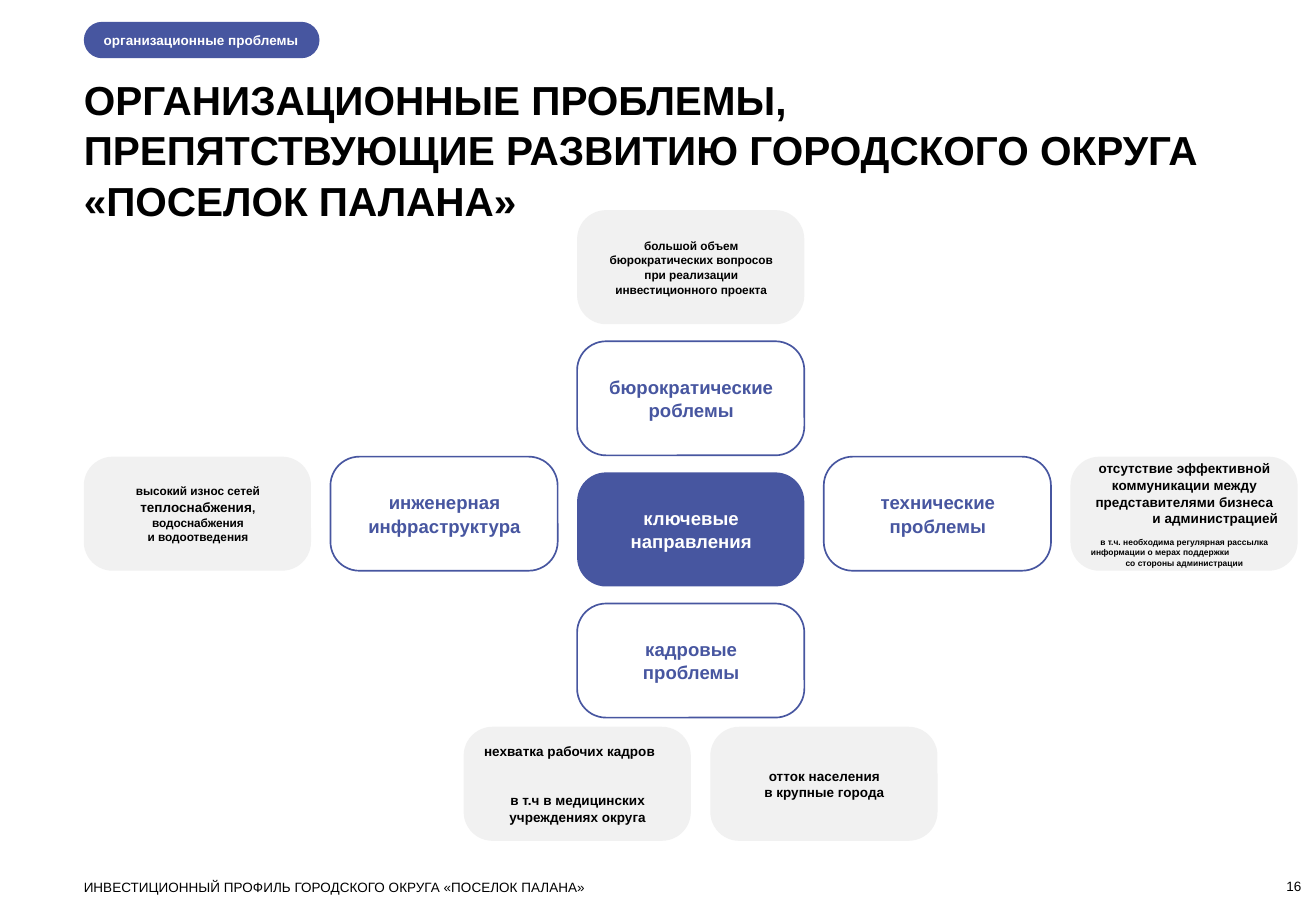
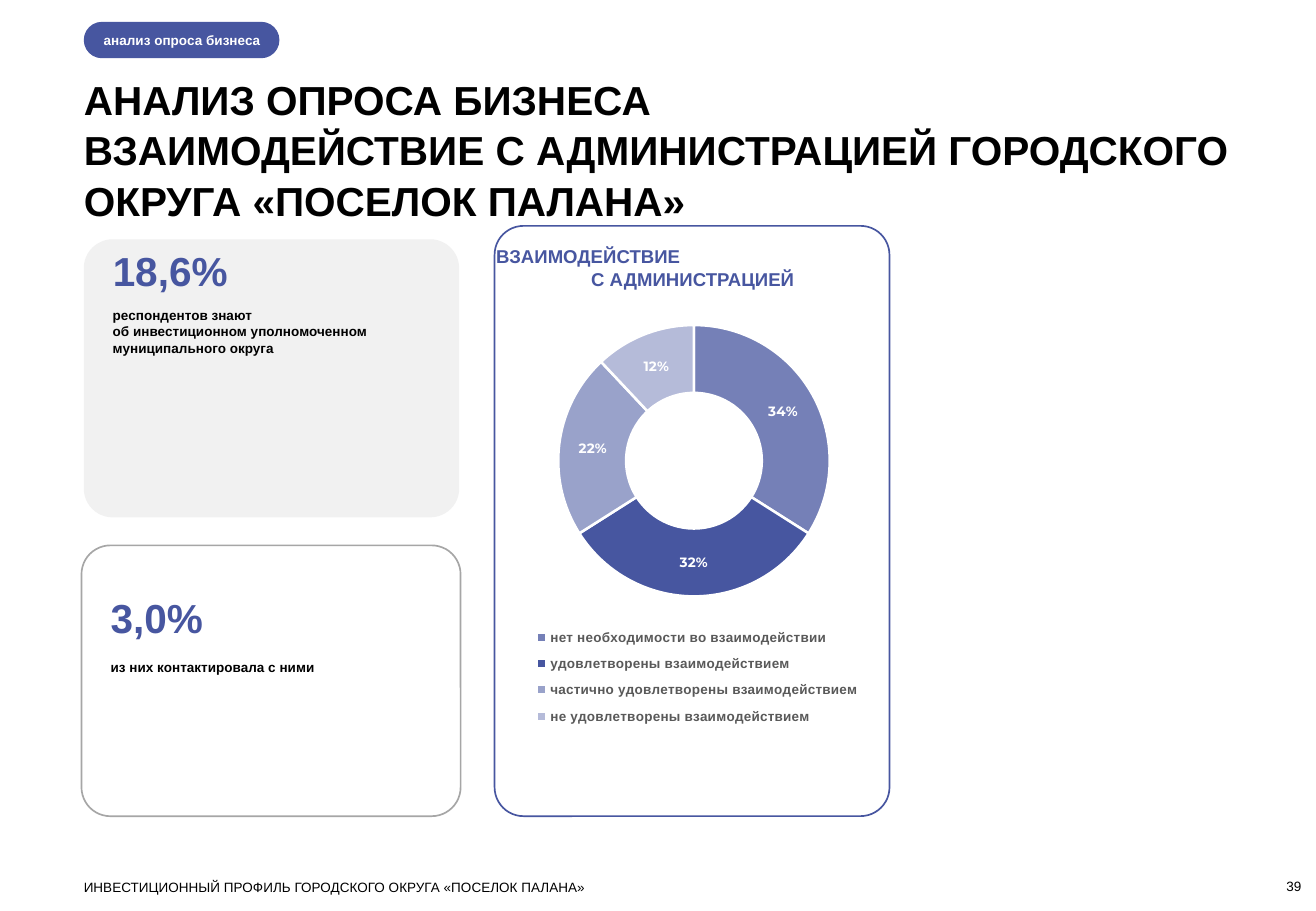
from dataclasses import dataclass

import pptx
import pptx.chart.data
import pptx.dml.color
import pptx.enum.chart
import pptx.enum.shapes
import pptx.enum.text
import pptx.oxml
import pptx.oxml.ns
import pptx.util

RGBColor = pptx.dml.color.RGBColor
Pt = pptx.util.Pt
ALIGN = pptx.enum.text.PP_ALIGN
ANCHOR = pptx.enum.text.MSO_ANCHOR

BLUE = RGBColor(0x47, 0x56, 0xA0)
PALE = RGBColor(0xF1, 0xF1, 0xF1)
GREY = RGBColor(0xA6, 0xA6, 0xA6)
LEGEND_GREY = RGBColor(0x59, 0x59, 0x59)
BLACK = RGBColor(0, 0, 0)
WHITE = RGBColor(0xFF, 0xFF, 0xFF)

FONT = "Arial"
LINE_SPACING = 1.04
FOOTER = "ИНВЕСТИЦИОННЫЙ ПРОФИЛЬ ГОРОДСКОГО ОКРУГА «ПОСЕЛОК ПАЛАНА»"
MARGIN = 6.37


@dataclass
class Box:
    left: int
    top: int
    width: int
    height: int

    def area(self, left, top, width, height):
        """A box inside this one, in percent of its size."""
        return Box(int(self.left + self.width * left / 100),
                   int(self.top + self.height * top / 100),
                   int(self.width * width / 100),
                   int(self.height * height / 100))

    def edges(self):
        return self.left, self.top, self.width, self.height


PAGE = Box(0, 0, pptx.util.Inches(10.83), pptx.util.Inches(7.5))
CORNER = PAGE.width * 0.022


@dataclass
class Line:
    """One paragraph; spans are (text, size) pairs."""
    spans: list
    align: object = ALIGN.CENTER
    before: float = 0


def lines(size, *texts, align=ALIGN.CENTER):
    return [Line([(text, size)], align) for text in texts]


def style_font(font, size, color, bold=True, name=FONT):
    font.name, font.size, font.bold = name, Pt(size), bold
    font.color.rgb = color


def write(frame, paragraphs, color, bold=True, insets=(0, 0, 0, 0),
          anchor=ANCHOR.TOP):
    frame.word_wrap = True
    frame.auto_size = pptx.enum.text.MSO_AUTO_SIZE.NONE
    frame.vertical_anchor = anchor
    (frame.margin_left, frame.margin_top,
     frame.margin_right, frame.margin_bottom) = map(pptx.util.Inches, insets)
    for index, line in enumerate(paragraphs):
        para = frame.add_paragraph() if index else frame.paragraphs[0]
        para.alignment = line.align
        para.line_spacing = LINE_SPACING
        para.space_before = Pt(line.before)
        for text, size in line.spans:
            span = para.add_run()
            span.text = text
            style_font(span.font, size, color, bold)


def add_text(page, box, paragraphs, color=BLACK, bold=True, anchor=ANCHOR.TOP):
    frame = page.shapes.add_textbox(*box.edges()).text_frame
    write(frame, paragraphs, color, bold, anchor=anchor)


def add_panel(page, box, fill=None, outline=None, corner=CORNER):
    panel = page.shapes.add_shape(
        pptx.enum.shapes.MSO_SHAPE.ROUNDED_RECTANGLE, *box.edges())
    panel.adjustments[0] = min(0.5, corner / min(box.width, box.height))
    panel.shadow.inherit = False
    if fill is None:
        panel.fill.background()
    else:
        panel.fill.solid()
        panel.fill.fore_color.rgb = fill
    if outline is None:
        panel.line.fill.background()
    else:
        panel.line.color.rgb = outline
        panel.line.width = Pt(1)
    return panel


def add_page(deck, title, tag, tag_width, number):
    """A title-only slide with tag, title, footer and page number."""
    page = deck.slides.add_slide(deck.slide_layouts[5])
    heading = page.shapes.title
    (heading.left, heading.top,
     heading.width, heading.height) = PAGE.area(MARGIN, 8, 92.52, 16.13).edges()
    write(heading.text_frame, lines(24, *title, align=ALIGN.LEFT), BLACK)
    pill = add_panel(page, PAGE.area(MARGIN, 2.4, tag_width, 4), BLUE,
                     corner=PAGE.height)
    write(pill.text_frame, lines(8, tag, align=ALIGN.LEFT), WHITE,
          insets=(0.12, 0, 0, 0), anchor=ANCHOR.MIDDLE)
    add_text(page, PAGE.area(MARGIN, 96.4, 73.87, 1.73),
             lines(8, FOOTER, align=ALIGN.LEFT), bold=False)
    add_text(page, PAGE.area(91.5, 96.4, 7.39, 1.73),
             lines(8, number, align=ALIGN.RIGHT), bold=False,
             anchor=ANCHOR.BOTTOM)
    return page


def add_problem_map(page, box):
    """Cards on a grid of five columns and five rows around the centre."""
    side_row, last_row = 1.88, 3.94
    topics = [
        (2, 1, "бюрократические роблемы"),
        (1, side_row, "инженерная инфраструктура"),
        (3, side_row, "технические проблемы"),
        (2, 3, "кадровые проблемы"),
    ]
    details = [
        (2, 0, lines(7, "большой объем бюрократических вопросов "
                        "при реализации инвестиционного проекта")),
        (0, side_row, [
            Line([("высокий износ сетей ", 7), ("теплоснабжения", 8),
                  (", водоснабжения", 7)]),
            Line([("и водоотведения", 7)])]),
        (4, side_row, [
            *lines(8, "отсутствие эффективной",
                   "коммуникации между представителями бизнеса"),
            Line([("и администрацией", 8)], ALIGN.RIGHT),
            Line([("в т.ч. необходима регулярная рассылка", 5)], before=6),
            Line([("информации о мерах поддержки", 5)], ALIGN.LEFT),
            Line([("со стороны администрации", 5)])]),
        (1.54, last_row, [
            Line([("нехватка рабочих кадров", 8)], ALIGN.LEFT),
            Line([("в т.ч в медицинских учреждениях округа", 8)], before=19)]),
        (2.54, last_row, lines(8, "отток населения", "в крупные города")),
    ]

    def add_card(column, row, paragraphs, color, fill=None, outline=None):
        cell = box.area(column * 20.32, row * 20.8, 18.72, 18.1)
        card = add_panel(page, cell, fill, outline)
        write(card.text_frame, paragraphs, color, anchor=ANCHOR.MIDDLE,
              insets=(0.1, 0.05, 0.09, 0.05))

    add_card(2, 2, lines(11, "ключевые направления"), WHITE, fill=BLUE)
    for column, row, topic in topics:
        add_card(column, row, lines(11, topic), BLUE, outline=BLUE)
    for column, row, paragraphs in details:
        add_card(column, row, paragraphs, BLACK, fill=PALE)


def add_statistic(page, box, figure, caption, tops, **panel_style):
    """A panel with a large figure and a caption at the given tops."""
    add_panel(page, box, **panel_style)
    figure_top, caption_top = tops
    add_text(page, box.area(7.7, figure_top, 86, 17),
             lines(24, figure, align=ALIGN.LEFT), BLUE)
    add_text(page, box.area(7.7, caption_top, 80, 17),
             lines(8, *caption, align=ALIGN.LEFT))


def set_layout(parent, position, shares, inner=False):
    """Give a plot area or legend a fixed place within its chart."""
    for old in parent.findall(pptx.oxml.ns.qn("c:layout")):
        parent.remove(old)
    target = '<c:layoutTarget val="inner"/>' if inner else ""
    modes = "".join(f'<c:{axis}Mode val="edge"/>' for axis in "xy")
    sizes = "".join(f'<c:{key} val="{share}"/>' for key, share in zip("xywh", shares))
    parent.insert(position, pptx.oxml.parse_xml(
        f'<c:layout {pptx.oxml.ns.nsdecls("c")}><c:manualLayout>'
        f'{target}{modes}{sizes}</c:manualLayout></c:layout>'))


def set_opacity(point_xml, percent):
    color = point_xml.find(".//" + pptx.oxml.ns.qn("a:srgbClr"))
    color.append(pptx.oxml.parse_xml(
        f'<a:alpha {pptx.oxml.ns.nsdecls("a")} val="{percent * 1000}"/>'))


def add_interaction_chart(page, box):
    slices = [
        ("нет необходимости во взаимодействии", 34, 75),
        ("удовлетворены взаимодействием", 32, 100),
        ("частично удовлетворены взаимодействием", 22, 55),
        ("не удовлетворены взаимодействием", 12, 40),
    ]
    names, values, opacities = zip(*slices)
    data = pptx.chart.data.CategoryChartData()
    data.categories = names
    data.add_series("Series 1", values)
    chart = page.shapes.add_chart(
        pptx.enum.chart.XL_CHART_TYPE.DOUGHNUT, *box.edges(), data).chart
    chart.has_title = False
    style_font(chart.font, 10, BLACK, False, "Calibri")

    plot = chart.plots[0]
    plot.vary_by_categories = True
    for index in range(len(slices)):
        sector = plot.series[0].points[index].format
        sector.fill.solid()
        sector.fill.fore_color.rgb = BLUE
        sector.line.color.rgb = WHITE
        sector.line.width = Pt(1.5)
    points = chart.element.findall(".//" + pptx.oxml.ns.qn("c:dPt"))
    for point_xml, opacity in zip(points, opacities):
        set_opacity(point_xml, opacity)

    plot.has_data_labels = True
    labels = plot.data_labels
    labels.show_percentage = True
    labels.show_value = False
    labels.number_format = "0%"
    labels.number_format_is_linked = False
    style_font(labels.font, 8, WHITE, name="Montserrat")

    chart.has_legend = True
    legend = chart.legend
    legend.position = pptx.enum.chart.XL_LEGEND_POSITION.RIGHT
    legend.include_in_layout = False
    style_font(legend.font, 8, LEGEND_GREY)

    plot_area = chart.element.find(".//" + pptx.oxml.ns.qn("c:plotArea"))
    set_layout(plot_area, 0, (0.16, 0.19, 0.69, 0.49), inner=True)
    legend_xml = chart.element.find(".//" + pptx.oxml.ns.qn("c:legend"))
    set_layout(legend_xml, 1, (0.08, 0.72, 0.87, 0.21))


def add_interaction_panel(page, box):
    add_interaction_chart(page, box.area(0, -1.03, 100, 93.83))
    add_panel(page, box, outline=BLUE)
    add_text(page, box.area(0.4, 3.09, 99.6, 7.61),
             [Line([("ВЗАИМОДЕЙСТВИЕ", 11)], ALIGN.LEFT),
              Line([("С АДМИНИСТРАЦИЕЙ", 11)])], BLUE)


def add_problems_page(deck):
    page = add_page(
        deck, ("ОРГАНИЗАЦИОННЫЕ ПРОБЛЕМЫ,",
               "ПРЕПЯТСТВУЮЩИЕ РАЗВИТИЮ ГОРОДСКОГО ОКРУГА «ПОСЕЛОК ПАЛАНА»"),
        "организационные проблемы", 17.91, "16")
    add_problem_map(page, PAGE.area(MARGIN, 23.07, 92.24, 69.2))


def add_survey_page(deck):
    page = add_page(
        deck, ("АНАЛИЗ ОПРОСА БИЗНЕСА",
               "ВЗАИМОДЕЙСТВИЕ С АДМИНИСТРАЦИЕЙ ГОРОДСКОГО ОКРУГА «ПОСЕЛОК ПАЛАНА»"),
        "анализ опроса бизнеса", 14.87, "39")
    add_statistic(page, PAGE.area(MARGIN, 26.27, 28.53, 30.53), "18,6%",
                  ("респондентов знают", "об инвестиционном уполномоченном",
                   "муниципального округа"), (1.75, 24), fill=PALE)
    add_statistic(page, PAGE.area(6.19, 59.87, 28.81, 29.73), "3,0%",
                  ("из них контактировала с ними",), (17, 41.7), outline=GREY)
    add_interaction_panel(page, PAGE.area(37.58, 24.8, 30.01, 64.8))


def main():
    deck = pptx.Presentation()
    deck.slide_width, deck.slide_height = PAGE.width, PAGE.height
    add_problems_page(deck)
    add_survey_page(deck)
    deck.save("out.pptx")


if __name__ == "__main__":
    main()
